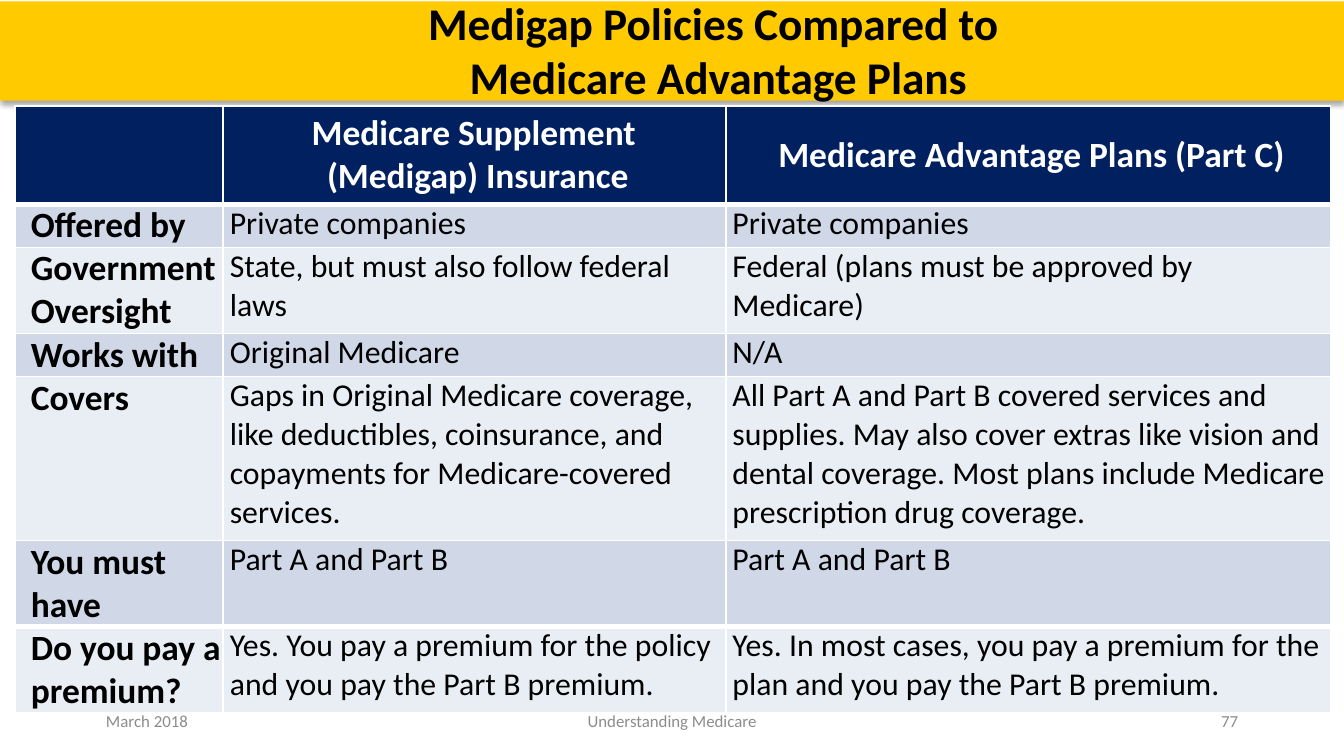
from pptx import Presentation
from pptx import util as u
from pptx.dml import color
from pptx.enum import shapes, text
from pptx.oxml import parse_xml
from pptx.oxml.ns import nsdecls

FONT = "Calibri"
NAVY, GOLD, GREY, WHITE, BLACK = "002060", "FFCB00", "8C8C8C", "FFFFFF", "000000"
BANDS = ["E9EDF4", "D0D8E8"]
LEFT, MID, RIGHT = text.PP_ALIGN.LEFT, text.PP_ALIGN.CENTER, text.PP_ALIGN.RIGHT
WIDTHS = [1.55, 3.74, 4.5]
HEIGHTS = [0.73, 0.32, 0.64, 0.32, 1.22, 0.64, 0.64]
ROWS = [
    ("", "Medicare Supplement \n(Medigap) Insurance", "Medicare Advantage Plans (Part C)"),
    ("Offered by", "Private companies", "Private companies"),
    ("Government Oversight", "State, but must also follow federal laws",
     "Federal (plans must be approved by Medicare)"),
    ("Works with", "Original Medicare", "N/A"),
    ("Covers",
     "Gaps in Original Medicare coverage, like deductibles, coinsurance, "
     "and copayments for Medicare-covered services.",
     "All Part A and Part B covered services and supplies. May also cover extras like "
     "vision and dental coverage. Most plans include Medicare prescription drug coverage."),
    ("You must have", "Part A and Part B", "Part A and Part B"),
    ("Do you pay a premium?",
     "Yes. You pay a premium for the policy and you pay the Part B premium.",
     "Yes. In most cases, you pay a premium for the plan and you pay the Part B premium."),
]


def rgb(code):
    return color.RGBColor.from_string(code)


def paint(item, code):
    item.fill.solid()
    item.fill.fore_color.rgb = rgb(code)


def style(frame, size, code, bold=False, align=LEFT):
    for para in frame.paragraphs:
        para.alignment = align
        font = para.font
        font.name, font.size, font.bold = FONT, u.Pt(size), bold
        font.color.rgb = rgb(code)


def place(shape, box):
    shape.left, shape.top, shape.width, shape.height = map(u.Inches, box)


def banner(slide, box):
    x, y, w, h = box
    bar = slide.shapes.add_shape(shapes.MSO_SHAPE.RECTANGLE, *map(u.Inches, box))
    paint(bar, GOLD)
    bar.line.fill.background()
    bar._element.spPr.append(parse_xml(
        f'<a:effectLst {nsdecls("a")}><a:outerShdw blurRad="{u.Pt(3.1)}" '
        f'dist="{u.Pt(1.8)}" dir="5400000" rotWithShape="0"><a:srgbClr val="{BLACK}">'
        '<a:alpha val="35000"/></a:srgbClr></a:outerShdw></a:effectLst>'))
    title = slide.shapes.title
    bar._element.addnext(title._element)
    place(title, (x + 0.69, y - 0.01, w - 0.69, h - 0.01))
    frame = title.text_frame
    frame.text = "Medigap Policies Compared to \vMedicare Advantage Plans"
    frame.auto_size = text.MSO_AUTO_SIZE.NONE
    frame.vertical_anchor = text.MSO_ANCHOR.MIDDLE
    frame.margin_top = frame.margin_bottom = 0
    style(frame, 24.3, BLACK, True, MID)


def border(cell, top, base):
    for side, size in zip("LRTB", (1, 1, top, base)):
        cell._tc.get_or_add_tcPr().append(parse_xml(
            f'<a:ln{side} {nsdecls("a")} w="{u.Pt(size)}"><a:solidFill>'
            f'<a:srgbClr val="{WHITE}"/></a:solidFill></a:ln{side}>'))


def grid(slide, box):
    table = slide.shapes.add_table(len(ROWS), len(WIDTHS), *map(u.Inches, box)).table
    for col, width in zip(table.columns, WIDTHS):
        col.width = u.Inches(width)
    for row, height in zip(table.rows, HEIGHTS):
        row.height = u.Inches(height)
    last = len(ROWS) - 1
    for r, row in enumerate(ROWS):
        for c, words in enumerate(row):
            cell = table.cell(r, c)
            head, label = r == 0, c == 0
            border(cell, 3 if r in (1, last) else 1, 3 if r in (0, last - 1) else 1)
            paint(cell, NAVY if head else BANDS[r % 2])
            cell.margin_top = cell.margin_right = cell.margin_bottom = 0
            cell.margin_left = u.Inches(0.12 if label else 0.05)
            cell.vertical_anchor = text.MSO_ANCHOR.MIDDLE if head else text.MSO_ANCHOR.TOP
            cell.text = words
            bold = head or label
            style(cell.text_frame, 19 if bold else 17, WHITE if head else BLACK,
                  bold, MID if head else LEFT)


def footer(slide, box):
    x, y, w, h = box
    parts = [(0, 2.25, "March 2018", LEFT),
             ((w - 3.38) / 2, 3.38, "Understanding Medicare", MID),
             (w - 2.25, 2.25, "77", RIGHT)]
    for gap, width, words, align in parts:
        note = slide.shapes.add_textbox(*map(u.Inches, (x + gap, y, width, h)))
        frame = note.text_frame
        frame.word_wrap = True
        frame.vertical_anchor = text.MSO_ANCHOR.MIDDLE
        frame.text = words
        style(frame, 9, GREY, align=align)


def main():
    deck = Presentation()
    deck.slide_width = u.Inches(10)
    deck.slide_height = deck.slide_width * 9 // 16
    slide = deck.slides.add_slide(deck.slide_layouts[5])
    banner(slide, (0, 0.01, 10, 0.74))
    grid(slide, (0.11, 0.79, sum(WIDTHS), sum(HEIGHTS)))
    footer(slide, (0.69, 5.21, 8.62, 0.3))
    deck.save("out.pptx")


if __name__ == "__main__":
    main()
